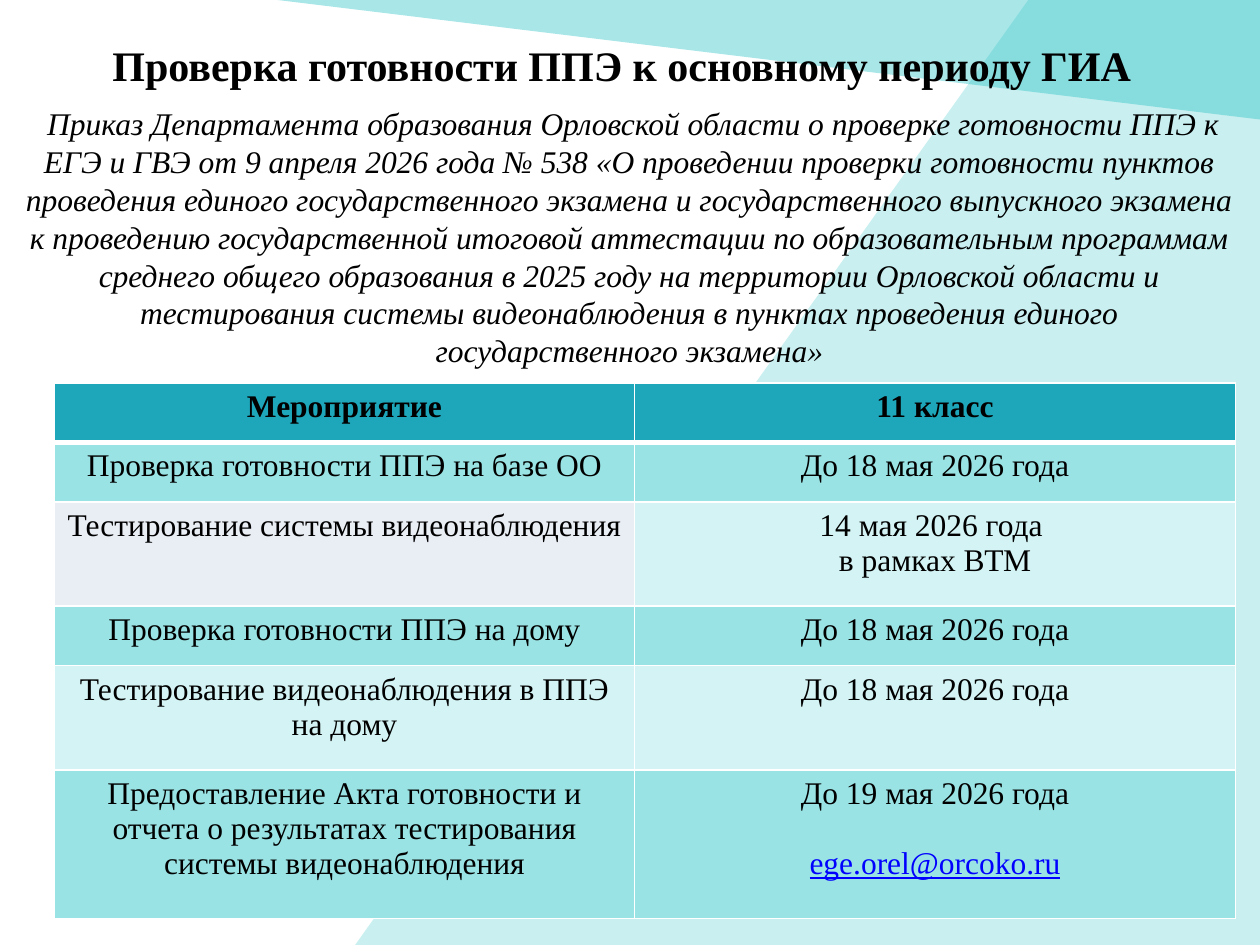
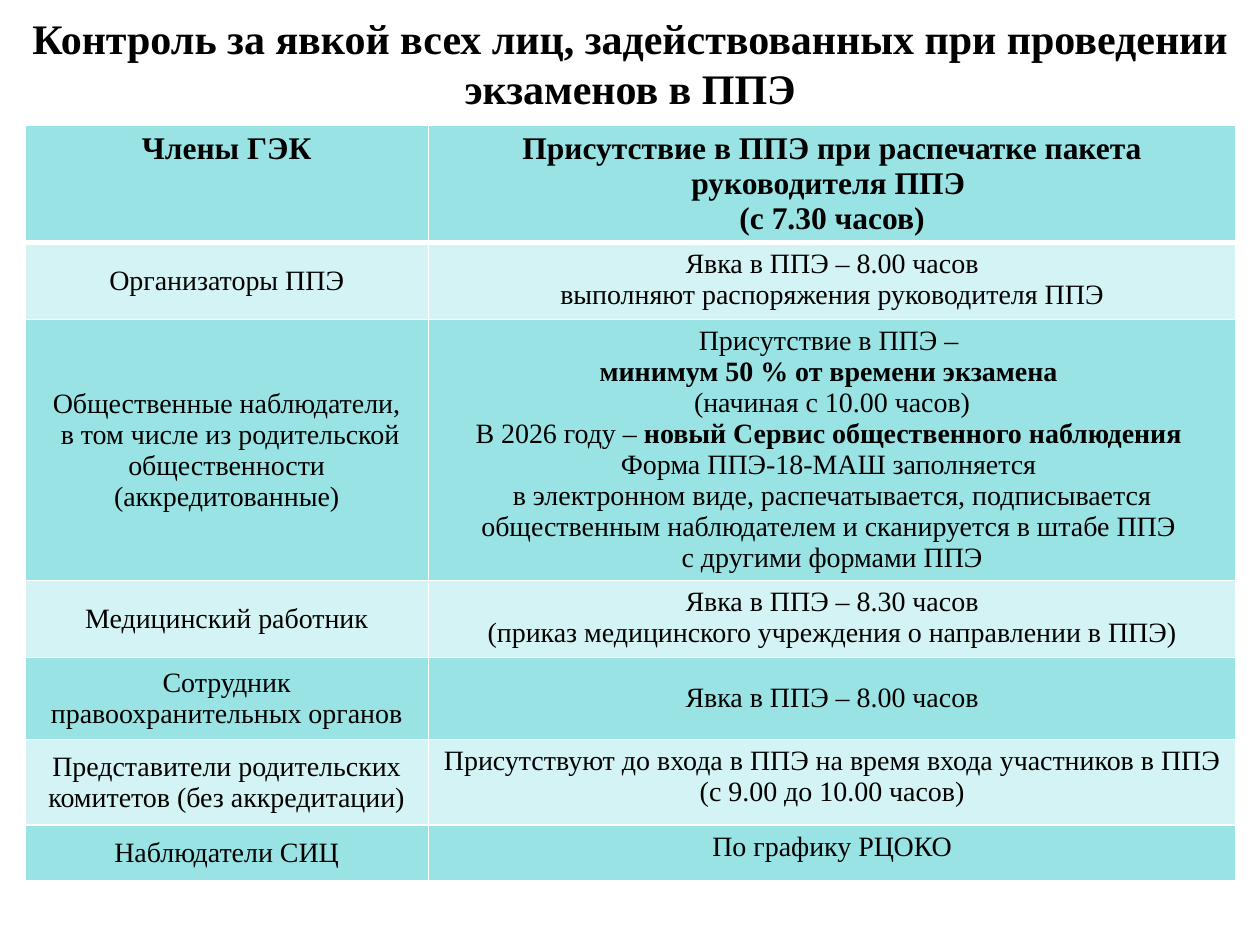
from lxml import etree
from pptx import Presentation
from pptx import util as u
from pptx.dml.color import RGBColor
from pptx.enum import text
from pptx.oxml.ns import qn

FONT = "Times New Roman"
COLORS = {
    "ink": "000000",
    "border": "FFFFFF",
    "header": "1EA7BA",
    "dark": "9AE3E4",
    "light": "D4F3F4",
    "grey": "E9EDF4",
    "wedge": "20C0C4",
    "mail": "0000FF",
}
SLIDE_W, SLIDE_H = 25.4, 19.05
BLANK_LAYOUT = 6
CELL_LEADING = 1.107  # line height in table cells, as a share of the text size


def rgb(name):
    return RGBColor.from_string(COLORS[name])


def write(frame, content, size, bold=False, italic=False, leading=None):
    """Fill a frame with centred lines; **...** marks bold parts."""
    frame.text = content.replace("**", "")
    for paragraph, line in zip(frame.paragraphs, content.split("\n")):
        paragraph.alignment = text.PP_ALIGN.CENTER
        if leading:
            paragraph.line_spacing = u.Pt(size * leading)
        parts = line.split("**")
        if len(parts) > 1:
            paragraph.clear()
            for part in filter(None, parts):
                paragraph.add_run().text = part
        for run in paragraph.runs:
            run.font.name = FONT
            run.font.size = u.Pt(size)
            run.font.bold = bold or run.text in parts[1::2]
            run.font.italic = italic
            run.font.color.rgb = rgb("ink")


def add_text(slide, left, top, width, height, content, size,
             anchor=text.MSO_ANCHOR.TOP, **style):
    box = slide.shapes.add_textbox(*map(u.Cm, (left, top, width, height)))
    frame = box.text_frame
    frame.word_wrap = True
    frame.vertical_anchor = anchor
    write(frame, content, size, **style)


def add_title(slide, left, top, content):
    add_text(slide, left, top, 24.69, 1.68, content, 24,
             anchor=text.MSO_ANCHOR.MIDDLE, bold=True)


def add_wedge(slide, points, opacity):
    """Draw a translucent outline through points given in cm."""
    corners = [(u.Cm(x), u.Cm(y)) for x, y in points]
    builder = slide.shapes.build_freeform(*corners[0], scale=1.0)
    builder.add_line_segments(corners[1:], close=True)
    wedge = builder.convert_to_shape()
    wedge.shadow.inherit = False
    wedge.line.fill.background()
    wedge.fill.solid()
    wedge.fill.fore_color.rgb = rgb("wedge")
    color = wedge._element.spPr.find(qn("a:solidFill"))[0]
    etree.SubElement(color, qn("a:alpha"), val=str(opacity * 1000))


def set_borders(cell, bottom):
    """Draw white cell edges; they precede the fill in the cell properties."""
    props = cell._tc.get_or_add_tcPr()
    for index, side in enumerate("LRTB"):
        width = u.Pt(bottom if side == "B" else 1)
        edge = etree.Element(qn(f"a:ln{side}"), w=str(width))
        fill = etree.SubElement(edge, qn("a:solidFill"))
        etree.SubElement(fill, qn("a:srgbClr"), val=COLORS["border"])
        props.insert(index, edge)


def add_grid(slide, left, top, columns, heights, rows, fills, size, middle=()):
    """Add a two-column table: bold header, then bands; middle lists centred cells."""
    table = slide.shapes.add_table(
        len(rows), len(columns), u.Cm(left), u.Cm(top),
        u.Cm(sum(columns)), u.Cm(sum(heights))).table
    for column, width in zip(table.columns, columns):
        column.width = u.Cm(width)
    for r, (entries, height) in enumerate(zip(rows, heights)):
        table.rows[r].height = u.Cm(height)
        header = r == 0
        for c, entry in enumerate(entries):
            cell = table.cell(r, c)
            cell.fill.solid()
            cell.fill.fore_color.rgb = rgb(fills[r])
            set_borders(cell, bottom=3 if header else 1)
            write(cell.text_frame, entry, 18 if header else size,
                  bold=header, leading=CELL_LEADING)
            if (r, c) in middle:
                cell.vertical_anchor = text.MSO_ANCHOR.MIDDLE
    return table


def build_readiness(slide):
    # Background wedges
    add_wedge(slide, [(SLIDE_W, 0), (20.73, 0), (7.16, SLIDE_H), (SLIDE_W, SLIDE_H)], 24)
    add_wedge(slide, [(5.59, 0), (SLIDE_W, 2.41), (SLIDE_W, 0)], 39)

    add_title(slide, 0.19, 0.46, "Проверка готовности ППЭ к основному периоду ГИА")

    # Schedule
    deadline = "До 18 мая 2026 года"
    schedule = add_grid(
        slide, 1.1, 7.72, [11.69, 12.12], [1.2, 1.2, 2.1, 1.2, 2.1, 3],
        [
            ("Мероприятие", "11 класс"),
            ("Проверка готовности ППЭ на базе ОО", deadline),
            ("Тестирование системы видеонаблюдения", "14 мая 2026 года \nв рамках ВТМ"),
            ("Проверка готовности ППЭ на дому", deadline),
            ("Тестирование видеонаблюдения в ППЭ на дому", deadline),
            ("Предоставление Акта готовности и отчета о результатах "
             "тестирования системы видеонаблюдения",
             "До 19 мая 2026 года\nege.orel@orcoko.ru"),
        ],
        ["header", "dark", "light", "dark", "light", "dark"], size=18)
    camera_test = schedule.cell(2, 0)
    camera_test.fill.fore_color.rgb = rgb("grey")
    mail = schedule.cell(5, 1).text_frame.paragraphs[1]
    mail.space_before = u.Pt(20)
    mail.runs[0].font.underline = True
    mail.runs[0].font.color.rgb = rgb("mail")

    # Order of the department
    add_text(
        slide, 0.08, 1.98, 25.22, 6.25,
        " Приказ Департамента образования Орловской области о проверке готовности "
        "ППЭ к ЕГЭ и ГВЭ от 9 апреля 2026 года № 538 «О проведении проверки "
        "готовности пунктов проведения единого государственного экзамена и "
        "государственного выпускного экзамена к проведению государственной итоговой "
        "аттестации по образовательным программам среднего общего образования в 2025 "
        "году на территории Орловской области и тестирования системы видеонаблюдения "
        "в пунктах проведения единого государственного экзамена»",
        18, italic=True)


def build_attendance(slide):
    add_title(slide, 0.36, 0.43,
              "Контроль за явкой всех лиц, задействованных при проведении экзаменов в ППЭ")

    # Who comes and when
    rows = [
        ("Члены ГЭК",
         "Присутствие в ППЭ при распечатке пакета руководителя ППЭ \n(с 7.30 часов)"),
        ("Организаторы ППЭ",
         "Явка в ППЭ – 8.00 часов\nвыполняют распоряжения руководителя ППЭ"),
        ("Общественные наблюдатели,\n"
         " в том числе из родительской общественности (аккредитованные)",
         "Присутствие в ППЭ – \n"
         "**минимум 50 % от времени экзамена **\n"
         "(начиная с 10.00 часов)\n"
         "В 2026 году – **новый Сервис общественного наблюдения **\n"
         "Форма ППЭ-18-МАШ заполняется \n"
         "в электронном виде, распечатывается, подписывается общественным "
         "наблюдателем и сканируется в штабе ППЭ \n"
         "с другими формами ППЭ"),
        ("Медицинский работник",
         "Явка в ППЭ – 8.30 часов\n(приказ медицинского учреждения о направлении в ППЭ)"),
        ("Сотрудник правоохранительных органов", "Явка в ППЭ – 8.00 часов"),
        ("Представители родительских комитетов (без аккредитации)",
         "Присутствуют до входа в ППЭ на время входа участников в ППЭ\n"
         "(с 9.00 до 10.00 часов)"),
        ("Наблюдатели СИЦ", "По графику РЦОКО"),
    ]
    fills = [("dark", "light")[r % 2] for r in range(len(rows))]
    middle = {(r, 0) for r in range(1, len(rows))} | {(4, 1)}
    add_grid(slide, 0.5, 2.53, [8.14, 16.27],
             [2.35, 1.55, 5.26, 1.55, 1.65, 1.73, 1.12],
             rows, fills, size=16, middle=middle)


def main():
    deck = Presentation()
    deck.slide_width, deck.slide_height = u.Cm(SLIDE_W), u.Cm(SLIDE_H)
    for build in (build_readiness, build_attendance):
        build(deck.slides.add_slide(deck.slide_layouts[BLANK_LAYOUT]))
    deck.save("out.pptx")


if __name__ == "__main__":
    main()
